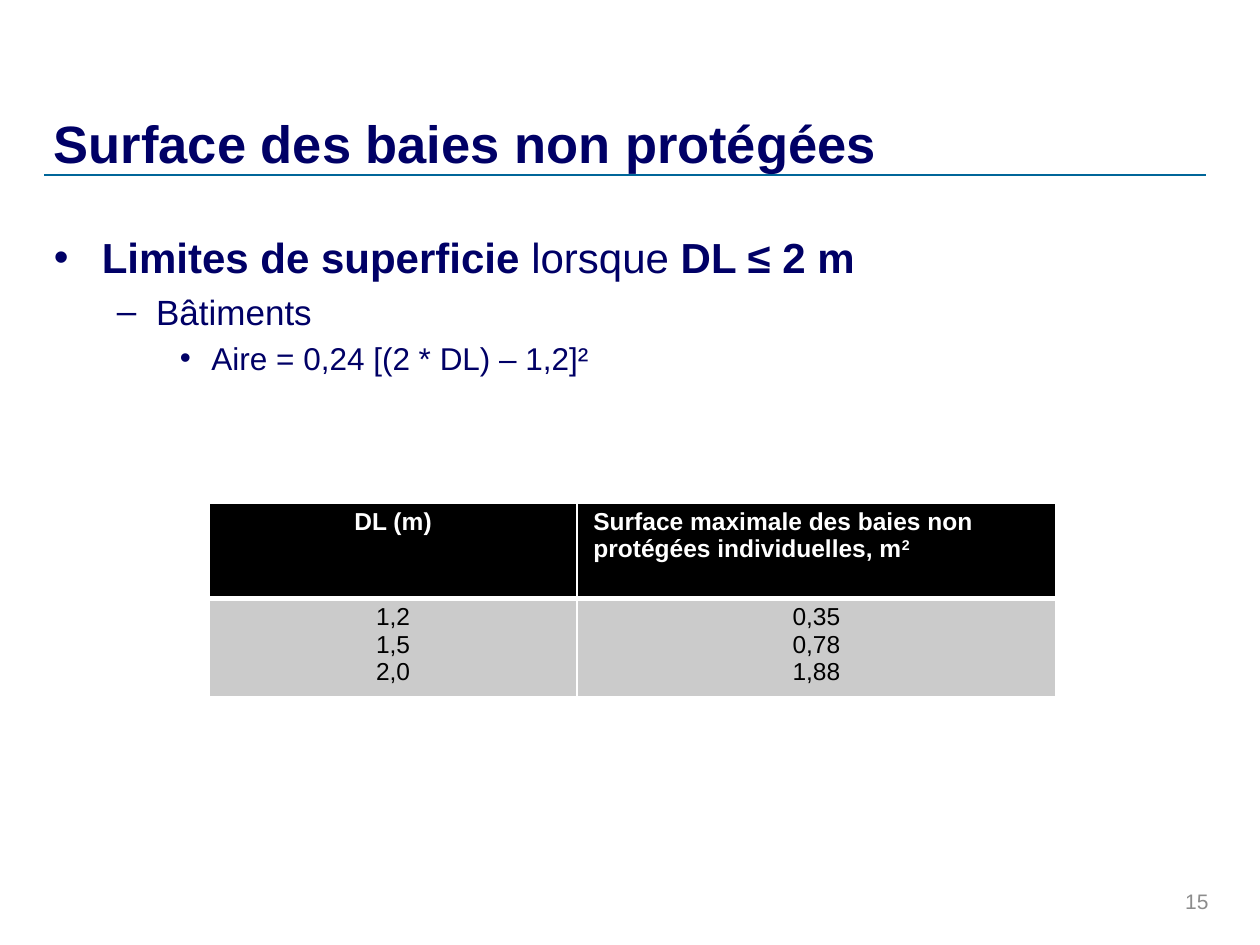
from dataclasses import dataclass

from lxml.etree import SubElement
from pptx import Presentation
from pptx.dml.color import RGBColor
from pptx.enum.shapes import MSO_CONNECTOR as Connector
from pptx.enum.text import MSO_ANCHOR as Anchor, PP_ALIGN as Align
from pptx.oxml.ns import qn
from pptx.util import Inches, Pt


@dataclass(frozen=True)
class Theme:
    font: str = "Arial"
    navy: str = "000066"
    rule: str = "006699"
    grey: str = "8C8C8C"
    white: str = "FFFFFF"
    black: str = "000000"
    row_fill: str = "CBCBCB"
    title: int = 30
    levels: tuple = (24, 20, 18)
    table: int = 14
    number: int = 12


theme = Theme()


def add_span(para, text, *, size, color, bold=False, baseline=0):
    span = para.add_run()
    span.text = text
    span.font.name = theme.font
    span.font.size = Pt(size)
    span.font.bold = bold
    span.font.color.rgb = RGBColor.from_string(color)
    if baseline:
        span.font._element.set("baseline", str(baseline * 1000))


def add_box(page, left, top, width, height, anchor):
    frame = page.shapes.add_textbox(
        Inches(left), Inches(top), Inches(width), Inches(height)).text_frame
    frame.word_wrap = True
    frame.vertical_anchor = anchor
    return frame


deck = Presentation()
deck.slide_width, deck.slide_height = Inches(10), Inches(7.5)
page = deck.slides.add_slide(deck.slide_layouts[6])

# Slide number
para = add_box(page, 7.36, 6.95, 2.33, 0.4, Anchor.MIDDLE).paragraphs[0]
para.alignment = Align.RIGHT
add_span(para, "15", size=theme.number, color=theme.grey)

# Title and rule
rule = page.shapes.add_connector(
    Connector.STRAIGHT, Inches(0.35), Inches(1.39), Inches(9.57), Inches(1.39))
rule.line.color.rgb = RGBColor.from_string(theme.rule)
rule.line.width = Pt(1)
SubElement(rule._element.spPr, qn("a:effectLst"))
para = add_box(page, 0.33, 0.29, 7.74, 1.14, Anchor.BOTTOM).paragraphs[0]
add_span(para, "Surface des baies non protégées",
         size=theme.title, color=theme.navy, bold=True)

# Bulleted text: bullet, left margin, hanging indent, space before, (text, bold) spans
bullets = [
    ("•", 0.38, 0.38, 0, [("Limites de superficie ", True), ("lorsque", False),
                          (" DL ≤ 2 m", True)]),
    ("–", 0.81, 0.31, 4.5, [("Bâtiments", False)]),
    ("•", 1.25, 0.25, 4, [("Aire = 0,24 [(2 * DL) – 1,2]²", False)]),
]
body = add_box(page, 0.33, 1.75, 9.25, 4.67, Anchor.TOP)
body.margin_top = Inches(0.09)
for level, (mark, margin, hanging, before, spans) in enumerate(bullets):
    para = body.add_paragraph() if level else body.paragraphs[0]
    para.level = level
    para.space_before = Pt(before)
    props = para._p.get_or_add_pPr()
    props.set("marL", str(Inches(margin)))
    props.set("indent", str(-Inches(hanging)))
    SubElement(props, qn("a:buFont"), typeface=theme.font)
    SubElement(props, qn("a:buChar"), char=mark)
    for text, bold in spans:
        add_span(para, text, size=theme.levels[level], color=theme.navy, bold=bold)

# Table: each cell lists its paragraphs
rows = [
    [["DL (m)"], ["Surface maximale des baies non protégées individuelles, m"]],
    [["1,2", "1,5", "2,0"], ["0,35", "0,78", "1,88"]],
]
table = page.shapes.add_table(
    2, 2, Inches(1.66), Inches(3.99), Inches(6.72), Inches(1.54)).table
for column, width in zip(table.columns, (2.92, 3.8)):
    column.width = Inches(width)
for row, height in zip(table.rows, (0.76, 0.78)):
    row.height = Inches(height)

for row_index, row in enumerate(rows):
    header = row_index == 0
    for column_index, lines in enumerate(row):
        cell = table.cell(row_index, column_index)
        cell.margin_left = cell.margin_right = Inches(0.13)
        cell.margin_top = cell.margin_bottom = Inches(0.04)
        # Borders come before the fill; the line under the header is thicker
        cell_props = cell._tc.get_or_add_tcPr()
        thick = "lnB" if header else "lnT"
        for side in ("lnL", "lnR", "lnT", "lnB"):
            border = SubElement(cell_props, qn(f"a:{side}"),
                                w=str(Pt(3 if side == thick else 1)))
            fill = SubElement(border, qn("a:solidFill"))
            SubElement(fill, qn("a:srgbClr"), val=theme.white)
        cell.fill.solid()
        cell.fill.fore_color.rgb = RGBColor.from_string(
            theme.black if header else theme.row_fill)
        for index, text in enumerate(lines):
            frame = cell.text_frame
            para = frame.add_paragraph() if index else frame.paragraphs[0]
            left_aligned = header and column_index == 1
            para.alignment = Align.LEFT if left_aligned else Align.CENTER
            add_span(para, text, size=theme.table, bold=header,
                     color=theme.white if header else theme.black)

# Exponent of the unit in the header
add_span(table.cell(0, 1).text_frame.paragraphs[0], "2", size=theme.table,
         color=theme.white, bold=True, baseline=30)

deck.save("out.pptx")
